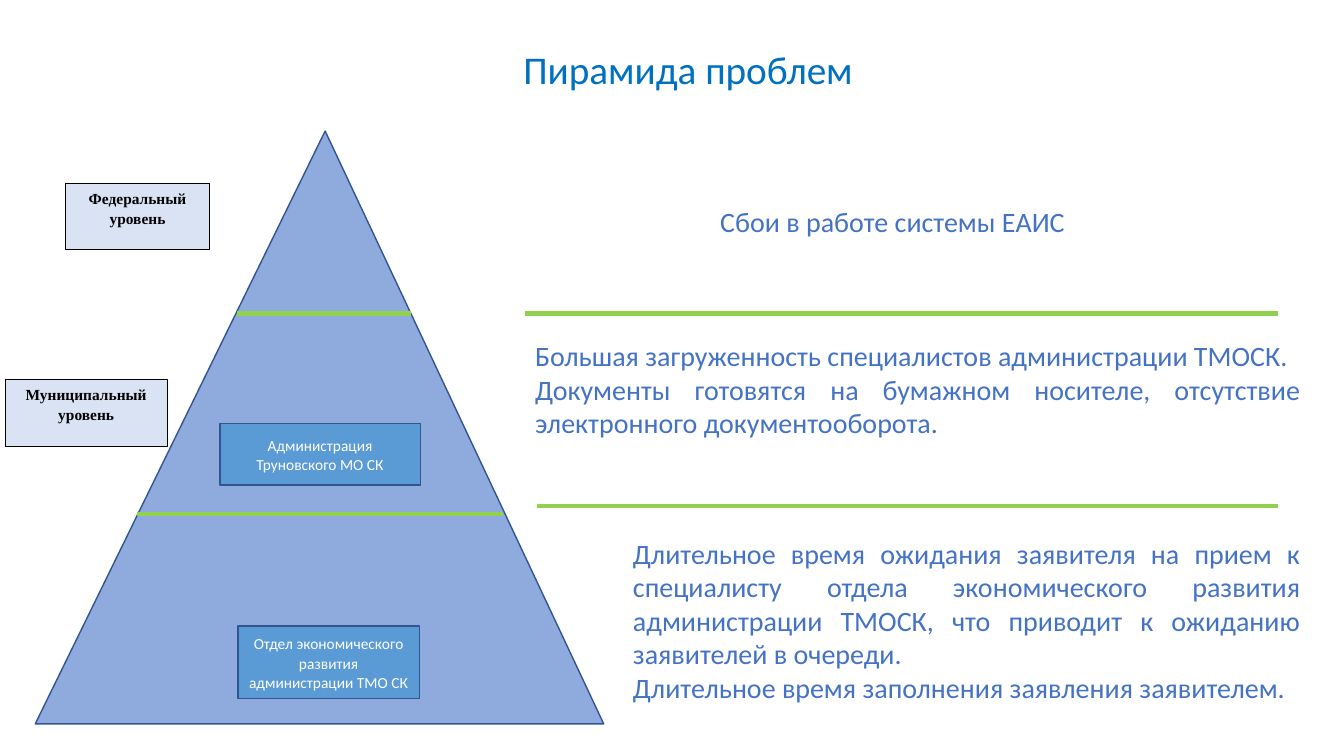
from dataclasses import dataclass

from lxml import etree
from pptx import Presentation
from pptx.dml.color import RGBColor
from pptx.enum.shapes import MSO_CONNECTOR, MSO_SHAPE
from pptx.enum.text import MSO_ANCHOR, PP_ALIGN
from pptx.oxml.ns import qn
from pptx.util import Pt

STRAIGHT = MSO_CONNECTOR.STRAIGHT
TRIANGLE, RECTANGLE = MSO_SHAPE.ISOSCELES_TRIANGLE, MSO_SHAPE.RECTANGLE
TOP, MIDDLE = MSO_ANCHOR.TOP, MSO_ANCHOR.MIDDLE
CENTER, JUSTIFY = PP_ALIGN.CENTER, PP_ALIGN.JUSTIFY

COLORS = {
    "title": "0070C0",
    "problem": "4472C4",
    "divider": "92D050",
    "pyramid": "8FAADC",
    "outline": "325491",
    "level": "DAE3F3",
    "office": "5B9BD5",
    "black": "000000",
    "white": "FFFFFF",
}


@dataclass(frozen=True)
class Box:
    left: float
    top: float
    width: float
    height: float


@dataclass(frozen=True)
class TextStyle:
    font: str
    size: float
    color: str
    align: PP_ALIGN = CENTER
    anchor: MSO_ANCHOR = TOP
    bold: bool = False
    line_spacing: float = 1.0
    space_after: float = 0


@dataclass(frozen=True)
class TextBlock:
    box: Box
    paragraphs: tuple[str, ...]
    style: TextStyle


@dataclass(frozen=True)
class LabelStyle:
    fill: str
    line: str
    line_width: float
    text: TextStyle


@dataclass(frozen=True)
class Label:
    box: Box
    text: str
    style: LabelStyle


@dataclass(frozen=True)
class Divider:
    left: float
    right: float
    y: float


TITLE = TextStyle("Calibri", 28, "title", anchor=MIDDLE, line_spacing=0.9)
CENTERED = TextStyle("Calibri", 20, "problem")
JUSTIFIED = TextStyle("Calibri", 20, "problem", align=JUSTIFY)
LEVEL = LabelStyle("level", "black", 0.5, TextStyle(
    "Times New Roman", 11, "black", bold=True, line_spacing=1.07, space_after=8))
OFFICE = LabelStyle("office", "outline", 1, TextStyle(
    "Calibri", 11, "white", anchor=MIDDLE, line_spacing=1.07, space_after=8))

PYRAMID = Box(25.2, 93.6, 406, 423.4)
PYRAMID_APEX = 0.51

TEXT_BLOCKS = (
    TextBlock(Box(108.7, 29.5, 765.4, 43.9), ("Пирамида проблем",), TITLE),
    TextBlock(Box(319.7, 142.6, 635.8, 31.7), ("Сбои в работе системы ЕАИС",), CENTERED),
    TextBlock(Box(375.1, 238.3, 560.9, 79.9), (
        "Большая загруженность специалистов администрации ТМОСК.",
        "Документы готовятся на бумажном носителе, отсутствие электронного документооборота.",
    ), JUSTIFIED),
    TextBlock(Box(445, 379.4, 491, 128.2), (
        "Длительное время ожидания заявителя на прием к специалисту отдела экономического "
        "развития администрации ТМОСК, что приводит к ожиданию заявителей в очереди.",
        "Длительное время заполнения заявления заявителем.",
    ), JUSTIFIED),
)

DIVIDERS = (
    Divider(375.1, 913, 223.9),
    Divider(383.8, 913, 361.4),
    Divider(169.2, 293.8, 223.9),
    Divider(97.9, 359.3, 367.2),
)

LABELS = (
    Label(Box(3.6, 270.7, 116, 48.5), "Муниципальный уровень", LEVEL),
    Label(Box(46.8, 131, 103, 47.5), "Федеральный уровень", LEVEL),
    Label(Box(157, 302.4, 143.3, 44), "Администрация\nТруновского МО СК", OFFICE),
    Label(Box(170, 447.1, 129.6, 51.8), "Отдел экономического развития администрации ТМО СК", OFFICE),
)


def rgb(name: str) -> RGBColor:
    return RGBColor.from_string(COLORS[name])


def bounds(box: Box) -> tuple[Pt, Pt, Pt, Pt]:
    return Pt(box.left), Pt(box.top), Pt(box.width), Pt(box.height)


def write_text(frame, paragraphs: tuple[str, ...], style: TextStyle) -> None:
    frame.word_wrap = True
    frame.vertical_anchor = style.anchor
    for index, text in enumerate(paragraphs):
        paragraph = frame.add_paragraph() if index else frame.paragraphs[0]
        paragraph.text = text
        paragraph.alignment = style.align
        paragraph.line_spacing = style.line_spacing
        paragraph.space_after = Pt(style.space_after)
        paragraph.font.name = style.font
        paragraph.font.size = Pt(style.size)
        paragraph.font.bold = style.bold
        paragraph.font.color.rgb = rgb(style.color)


def add_text_block(slide, block: TextBlock) -> None:
    text_box = slide.shapes.add_textbox(*bounds(block.box))
    write_text(text_box.text_frame, block.paragraphs, block.style)


def add_filled_shape(slide, kind: MSO_SHAPE, box: Box, fill: str, line: str, line_width: float):
    shape = slide.shapes.add_shape(kind, *bounds(box))
    shape.shadow.inherit = False
    shape.fill.solid()
    shape.fill.fore_color.rgb = rgb(fill)
    shape.line.color.rgb = rgb(line)
    shape.line.width = Pt(line_width)
    return shape


def add_label(slide, label: Label) -> None:
    style = label.style
    shape = add_filled_shape(slide, RECTANGLE, label.box, style.fill, style.line, style.line_width)
    write_text(shape.text_frame, (label.text,), style.text)


def add_divider(slide, divider: Divider) -> None:
    y = Pt(divider.y)
    line = slide.shapes.add_connector(STRAIGHT, Pt(divider.left), y, Pt(divider.right), y)
    line.line.color.rgb = rgb("divider")
    line.line.width = Pt(3)
    etree.SubElement(line._element.spPr, qn("a:effectLst"))


def main() -> None:
    presentation = Presentation()
    presentation.slide_width, presentation.slide_height = Pt(960), Pt(540)
    slide = presentation.slides.add_slide(presentation.slide_layouts[6])

    for block in TEXT_BLOCKS:
        add_text_block(slide, block)
    pyramid = add_filled_shape(slide, TRIANGLE, PYRAMID, "pyramid", "outline", 1)
    pyramid.adjustments[0] = PYRAMID_APEX
    for divider in DIVIDERS:
        add_divider(slide, divider)
    for label in LABELS:
        add_label(slide, label)

    presentation.save("out.pptx")


if __name__ == "__main__":
    main()
